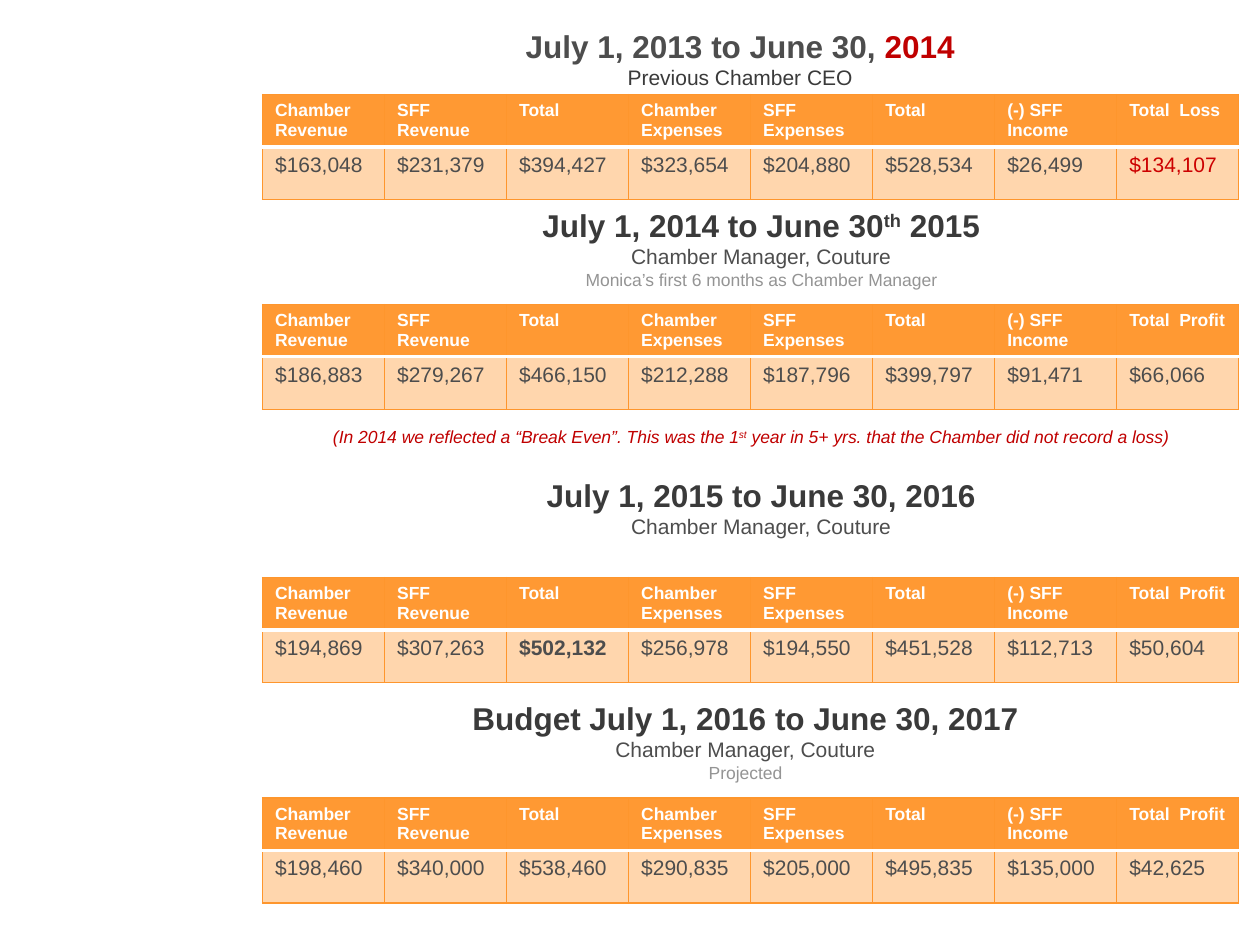
from dataclasses import dataclass
from typing import NamedTuple

from lxml.etree import SubElement as Sub
from pptx import Presentation as Deck
from pptx.dml.color import RGBColor as Rgb
from pptx.enum.text import MSO_AUTO_SIZE as Fit, PP_ALIGN as Align
from pptx.oxml.ns import qn
from pptx.util import Inches, Pt


@dataclass(frozen=True)
class Theme:
    face: str = "Arial"
    head: int = 18
    body: int = 12
    small: int = 10
    fill: str = "FF9933"
    edge: str = "FE962D"
    white: str = "FFFFFF"
    dark: str = "3A3A3A"
    gray: str = "4D4D4D"
    pale: str = "949494"
    red: str = "C00000"
    loss: str = "CC0000"
    tint: int = 40
    thin: float = 0.75
    thick: float = 2


class Run(NamedTuple):
    text: str
    size: int
    color: str
    bold: bool = False
    slant: bool = False
    lift: int = 0


class Box(NamedTuple):
    left: float
    top: float
    width: float
    height: float


class Note(NamedTuple):
    box: Box
    lines: list[list[Run]]


class Year(NamedTuple):
    top: float
    last: str
    sums: str
    mark: int = -1
    style: dict = {}


T = Theme()
WIDE, HIGH = Inches(10), Inches(7.5)
COLS, ROWS = 120, 90
LEFT, SPAN, ROW = 25, 93, 5
HEADS = ["Chamber\nRevenue", "SFF Revenue", "Total", "Chamber Expenses",
         "SFF Expenses", "Total", "(-) SFF Income"]


def place(box: Box) -> list[int]:
    return [round(WIDE * box.left / COLS), round(HIGH * box.top / ROWS),
            round(WIDE * box.width / COLS), round(HIGH * box.height / ROWS)]


def write(frame, lines: list[list[Run]], align: Align) -> None:
    for i, line in enumerate(lines):
        para = frame.paragraphs[0] if i == 0 else frame.add_paragraph()
        para.alignment = align
        for part in line:
            run = para.add_run()
            run.text = part.text
            form = {"name": T.face, "size": Pt(part.size),
                    "bold": part.bold, "italic": part.slant}
            for key, val in form.items():
                setattr(run.font, key, val)
            run.font.color.rgb = Rgb.from_string(part.color)
            if part.lift:
                run.font._element.set("baseline", str(part.lift * 1000))


def tone(node, color: str, share: int = 100) -> None:
    hue = Sub(Sub(node, qn("a:solidFill")), qn("a:srgbClr"), val=color)
    if share < 100:
        Sub(hue, qn("a:alpha"), val=str(share * 1000))


def paint(cell, top: bool) -> None:
    props = cell._tc.get_or_add_tcPr()
    rule = (T.white, T.thick)
    edges = dict.fromkeys("LRTB", (T.edge, T.thin))
    edges["B" if top else "T"] = rule
    for side, (color, size) in edges.items():
        tone(Sub(props, qn(f"a:ln{side}"), w=str(Pt(size))), color)
    tone(props, T.fill, 100 if top else T.tint)


def draw_year(slide, year: Year) -> None:
    box = Box(LEFT, year.top, SPAN, 2 * ROW)
    heads = HEADS + [year.last]
    grid = slide.shapes.add_table(2, len(heads), *place(box)).table
    grid.horz_banding = False
    for col in grid.columns:
        col.width = round(WIDE * SPAN / COLS / len(heads))
    for i, (head, total) in enumerate(zip(heads, year.sums.split())):
        top = [[Run(word, T.small, T.white, True)] for word in head.split("\n")]
        low = Run("$" + total, T.body, T.gray)
        if i == year.mark:
            low = low._replace(**year.style)
        for row, lines in enumerate((top, [[low]])):
            cell = grid.cell(row, i)
            write(cell.text_frame, lines, Align.LEFT)
            paint(cell, row == 0)


def draw_note(slide, note: Note) -> None:
    frame = slide.shapes.add_textbox(*place(note.box)).text_frame
    for key, val in {"word_wrap": True, "auto_size": Fit.SHAPE_TO_FIT_TEXT}.items():
        setattr(frame, key, val)
    write(frame, note.lines, Align.CENTER)


def head(text: str, color: str = T.dark, lift: int = 0) -> Run:
    return Run(text, T.head, color, True, lift=lift)


def aside(text: str, lift: int = 0) -> Run:
    return Run(text, T.small, T.red, slant=True, lift=lift)


BOSS = [Run("Chamber Manager, Couture", T.body, T.gray)]

YEARS = [
    Year(9, "Total  Loss", "163,048 231,379 394,427 323,654 204,880 528,534 26,499 134,107",
         7, {"color": T.loss}),
    Year(29, "Total  Profit", "186,883 279,267 466,150 212,288 187,796 399,797 91,471 66,066"),
    Year(55, "Total  Profit", "194,869 307,263 502,132 256,978 194,550 451,528 112,713 50,604",
         2, {"bold": True}),
    Year(76, "Total  Profit", "198,460 340,000 538,460 290,835 205,000 495,835 135,000 42,625"),
]

NOTES = [
    Note(Box(37, 2, 67, 7.3), [
        [head("July 1, 2013 to June 30, ", T.gray), head("2014", T.red)],
        [Run("Previous Chamber CEO", T.body, T.dark)]]),
    Note(Box(39, 19, 67, 9.25), [
        [head("July 1, 2014 to June 30"), head("th", lift=30), head(" 2015")],
        BOSS,
        [Run("Monica’s first 6 months as Chamber Manager", T.small, T.pale)]]),
    Note(Box(LEFT, 40, SPAN, 3.25), [
        [aside("(In 2014 we reflected a “Break Even”. This was the 1"),
         aside("st", 30),
         aside(" year in 5+ yrs. that the Chamber did not record a loss)")]]),
    Note(Box(39, 44.75, 67, 7.3), [[head("July 1, 2015 to June 30, 2016")], BOSS]),
    Note(Box(LEFT, 66, 92, 9.25), [
        [head("Budget July 1, 2016 to June 30, 2017")],
        BOSS,
        [Run("Projected", T.small, T.pale)]]),
]


def main() -> None:
    deck = Deck()
    deck.slide_width, deck.slide_height = WIDE, HIGH
    slide = deck.slides.add_slide(deck.slide_layouts.get_by_name("Blank"))
    for year in YEARS:
        draw_year(slide, year)
    for note in NOTES:
        draw_note(slide, note)
    deck.save("out.pptx")


if __name__ == "__main__":
    main()
